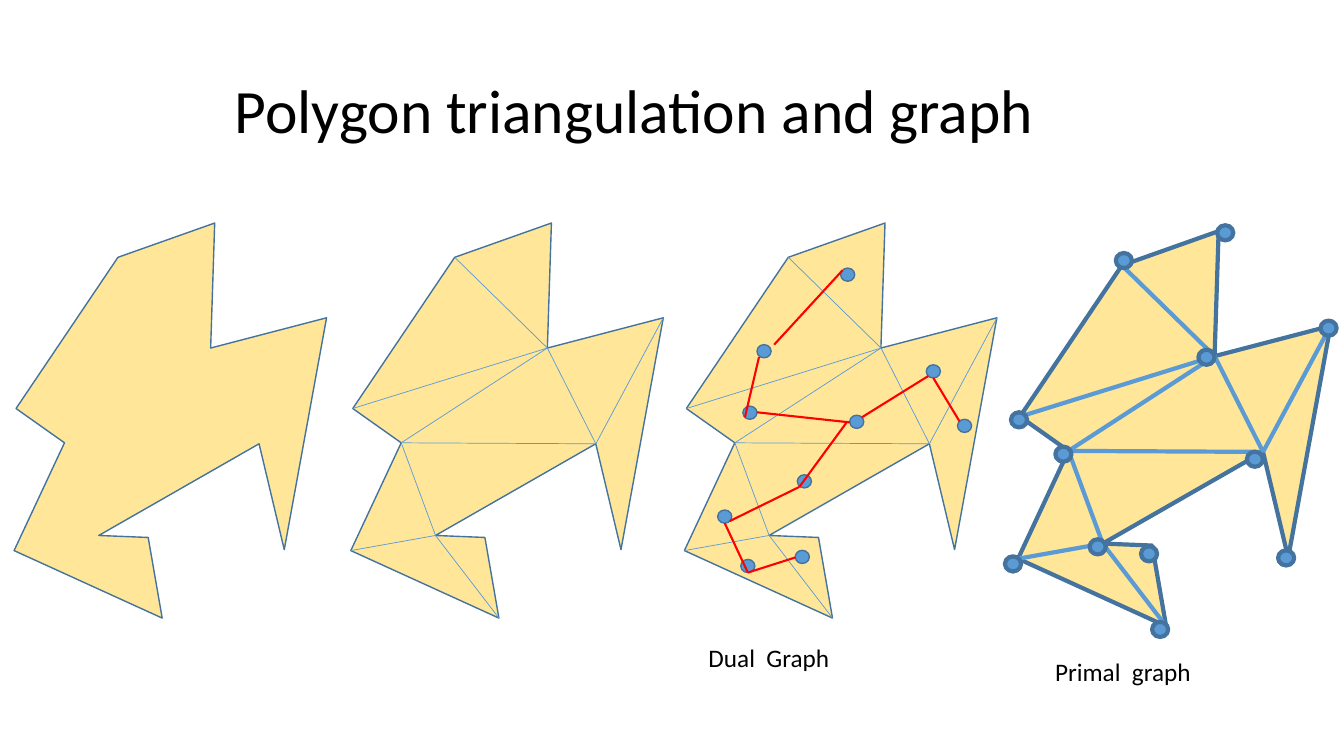
from typing import NamedTuple

from lxml import etree
from pptx import Presentation, util as u
from pptx.dml.color import RGBColor
from pptx.enum import shapes, text
from pptx.oxml.ns import qn

SAND, BLUE, NAVY, RED, BLACK = "FFE699", "5B9BD5", "43739E", "FF0000", "000000"
FONT = "Calibri"


class Point(NamedTuple):
    x: float
    y: float


class Panel(NamedTuple):
    left: float
    top: float
    edge: float  # outline width
    cut: float   # width of the diagonals, 0 for none


class Nodes(NamedTuple):
    wide: float
    high: float
    edge: float
    spots: list[Point]


class Label(NamedTuple):
    words: str
    left: float
    top: float
    wide: float
    high: float
    size: float
    inset: float = 7.2
    space: float = 1.0


# Polygon corners, measured from the panel's top left
CORNERS = [Point(*p) for p in (
    (74.2, 24.5), (1.4, 132.5), (36, 157), (0, 234), (105.8, 282.2), (95.8, 224.6),
    (60.5, 223.2), (175, 157.7), (193, 233.3), (223.2, 67.7), (140.4, 89.3), (143.3, 0))]

# Diagonals as pairs of corner numbers
CUTS = [(0, 10), (1, 10), (10, 7), (7, 9), (2, 10), (2, 7), (2, 6), (6, 3), (6, 4)]

PANELS = [
    Panel(10.1, 159.3, 1, 0),
    Panel(250.6, 159.3, 1, 0.5),
    Panel(488.9, 159.3, 1, 0.5),
    Panel(727.2, 165.1, 3, 3),
]

# Node centres of both graphs
DUAL = Nodes(10.1, 9.4, 1, [Point(*p) for p in (
    (605.5, 196.2), (545.8, 250.9), (535.7, 294.8), (612, 301.3), (517.7, 369),
    (574.6, 343.8), (666.7, 265.3), (689, 304.2), (534.2, 404.3), (573.1, 397.8))])
PRIMAL = Nodes(11.5, 10.8, 3, [Point(*p) for p in (
    (723.6, 402.8), (727.9, 299.9), (918.7, 398.5), (896.4, 328), (949, 234.4),
    (802.8, 186.1), (875.2, 166.3), (828.7, 449.6), (861.8, 255.2), (820.8, 395.6),
    (784.1, 390.6), (759.6, 324.4))])

# Links of the dual graph
LINKS = [(Point(a, b), Point(c, d)) for a, b, c, d in (
    (601.9, 193, 553, 246.2), (542.2, 254.9, 532.1, 298.1),
    (540.7, 294.5, 607, 301.7), (663.1, 268.6, 615.6, 298.1),
    (666.7, 270, 685.4, 301), (604.8, 301.7, 571, 347.8),
    (521.3, 372.2, 571, 347.8), (517.7, 373.7, 534.2, 409),
    (534.2, 409, 568.1, 398.2))]

LABELS = [
    Label("Polygon triangulation and graph", 66.2, 28.8, 828, 104.4, 44, 101.5, 0.9),
    Label("Dual  Graph", 499, 455, 129.6, 28.8, 18),
    Label("Primal  graph", 746.6, 465.1, 144, 28.8, 18),
]


def tint(code: str) -> RGBColor:
    return RGBColor.from_string(code)


def paint(shape, fill: str, line: str, edge: float) -> None:
    shape.shadow.inherit = False
    shape.fill.solid()
    shape.fill.fore_color.rgb = tint(fill)
    shape.line.color.rgb = tint(line)
    shape.line.width = u.Pt(edge)


def draw_line(slide, a: Point, b: Point, color: str, width: float) -> None:
    line = slide.shapes.add_connector(
        shapes.MSO_CONNECTOR.STRAIGHT, u.Pt(a.x), u.Pt(a.y), u.Pt(b.x), u.Pt(b.y))
    line.line.color.rgb = tint(color)
    line.line.width = u.Pt(width)
    etree.SubElement(line._element.spPr, qn("a:effectLst"))


def draw_panel(slide, panel: Panel) -> None:
    spots = [Point(panel.left + p.x, panel.top + p.y) for p in CORNERS]
    first, *rest = [(u.Pt(p.x), u.Pt(p.y)) for p in spots]
    pen = slide.shapes.build_freeform(*first)
    pen.add_line_segments(rest, close=True)
    paint(pen.convert_to_shape(), SAND, NAVY, panel.edge)
    if panel.cut:
        for a, b in CUTS:
            draw_line(slide, spots[a], spots[b], BLUE, panel.cut)


def draw_nodes(slide, nodes: Nodes) -> None:
    for p in nodes.spots:
        dot = slide.shapes.add_shape(
            shapes.MSO_SHAPE.OVAL, u.Pt(p.x - nodes.wide / 2),
            u.Pt(p.y - nodes.high / 2), u.Pt(nodes.wide), u.Pt(nodes.high))
        paint(dot, BLUE, NAVY, nodes.edge)


def draw_label(slide, label: Label) -> None:
    box = slide.shapes.add_textbox(
        u.Pt(label.left), u.Pt(label.top), u.Pt(label.wide), u.Pt(label.high))
    frame = box.text_frame
    frame.word_wrap = True
    frame.vertical_anchor = text.MSO_ANCHOR.MIDDLE
    frame.margin_left = u.Pt(label.inset)
    frame.text = label.words
    para = frame.paragraphs[0]
    para.line_spacing = label.space
    font = para.runs[0].font
    font.name, font.size = FONT, u.Pt(label.size)
    font.color.rgb = tint(BLACK)


def main() -> None:
    deck = Presentation()
    deck.slide_width, deck.slide_height = u.Pt(960), u.Pt(540)
    slide = deck.slides.add_slide(deck.slide_layouts[6])

    # Polygons with their diagonals
    for panel in PANELS:
        draw_panel(slide, panel)

    # Dual graph, then primal graph
    draw_nodes(slide, DUAL)
    for a, b in LINKS:
        draw_line(slide, a, b, RED, 1.5)
    draw_nodes(slide, PRIMAL)

    # Title and captions
    for label in LABELS:
        draw_label(slide, label)

    deck.save("out.pptx")


if __name__ == "__main__":
    main()
